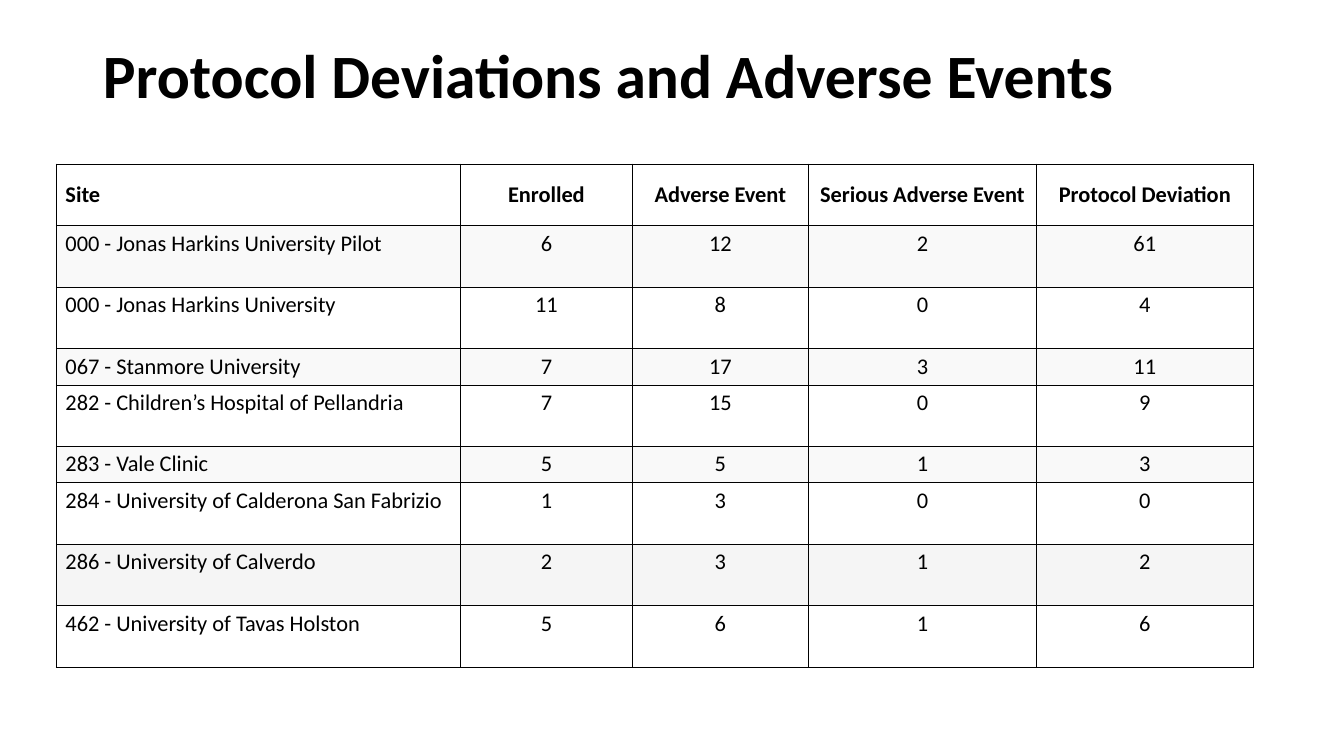
"""Build a slide with a table of protocol deviations and adverse events by site."""
import pptx
import pptx.dml.color
import pptx.enum.text
import pptx.oxml
import pptx.oxml.ns
import pptx.util

Inches, Pt = pptx.util.Inches, pptx.util.Pt
RGBColor = pptx.dml.color.RGBColor
PP_ALIGN = pptx.enum.text.PP_ALIGN
MIDDLE = pptx.enum.text.MSO_ANCHOR.MIDDLE
TOP = pptx.enum.text.MSO_ANCHOR.TOP

BLACK = RGBColor(0x00, 0x00, 0x00)
WHITE = RGBColor(0xFF, 0xFF, 0xFF)
PALE = RGBColor(0xF9, 0xF9, 0xF9)
GREY = RGBColor(0xF5, 0xF5, 0xF5)

TALL, SHORT = 0.61, 0.36
COLS = [4.01, 1.7, 1.75, 2.26, 2.15]
ROWS = [
    (TALL, WHITE, ["Site", "Enrolled", "Adverse Event", "Serious Adverse Event", "Protocol Deviation"]),
    (TALL, PALE, ["000 - Jonas Harkins University Pilot", 6, 12, 2, 61]),
    (TALL, WHITE, ["000 - Jonas Harkins University", 11, 8, 0, 4]),
    (SHORT, PALE, ["067 - Stanmore University", 7, 17, 3, 11]),
    (TALL, WHITE, ["282 - Children’s Hospital of Pellandria", 7, 15, 0, 9]),
    (SHORT, PALE, ["283 - Vale Clinic", 5, 5, 1, 3]),
    (TALL, WHITE, ["284 - University of Calderona San Fabrizio", 1, 3, 0, 0]),
    (TALL, GREY, ["286 - University of Calverdo", 2, 3, 1, 2]),
    (TALL, WHITE, ["462 - University of Tavas Holston", 5, 6, 1, 6]),
]


def format_font(font, **values):
    """Set the shared font and the given attributes."""
    for name, value in {"name": "Calibri", **values}.items():
        setattr(font, name, value)
    font.color.rgb = BLACK


def add_border(cell, side, width):
    """Draw a solid black border on one side of a cell."""
    cell._tc.get_or_add_tcPr().append(pptx.oxml.parse_xml(
        f'<a:ln{side} {pptx.oxml.ns.nsdecls("a")} w="{Pt(width)}">'
        f'<a:solidFill><a:srgbClr val="{BLACK}"/></a:solidFill></a:ln{side}>'))


prs = pptx.Presentation()
prs.slide_width, prs.slide_height = Inches(13.33), Inches(7.5)
s = prs.slides.add_slide(prs.slide_layouts[5])

title = s.shapes.title
title.left, title.top, title.width, title.height = map(Inches, (0.92, 0.32, 11.5, 0.92))
tf = title.text_frame
tf.text = "Protocol Deviations and Adverse Events"
tf.vertical_anchor = MIDDLE
tf.auto_size = pptx.enum.text.MSO_AUTO_SIZE.NONE
p = tf.paragraphs[0]
p.alignment, p.line_spacing = PP_ALIGN.LEFT, 0.9
format_font(p.runs[0].font, size=Pt(44), bold=True)

height = sum(row[0] for row in ROWS)
table = s.shapes.add_table(len(ROWS), len(COLS), Inches(0.56), Inches(1.63),
                           Inches(sum(COLS)), Inches(height)).table
table.horz_banding = False
for column, width in zip(table.columns, COLS):
    column.width = Inches(width)

margins = {"margin_left": 0.09, "margin_right": 0.09, "margin_top": 0.04, "margin_bottom": 0.04}
for i, (row_height, fill, values) in enumerate(ROWS):
    table.rows[i].height = Inches(row_height)
    header, last = i == 0, i == len(ROWS) - 1
    borders = {"L": 1, "R": 1, "T": 1 if header else 0.6, "B": 1 if last else 0.6}
    for j, value in enumerate(values):
        cell = table.cell(i, j)
        for name, inset in margins.items():
            setattr(cell, name, Inches(inset))
        cell.vertical_anchor = MIDDLE if header else TOP
        for side, width in borders.items():
            add_border(cell, side, width)
        cell.fill.solid()
        cell.fill.fore_color.rgb = fill
        p = cell.text_frame.paragraphs[0]
        p.alignment = PP_ALIGN.CENTER if j else PP_ALIGN.LEFT
        r = p.add_run()
        r.text = str(value)
        format_font(r.font, size=Pt(16), bold=header)

prs.save("out.pptx")
